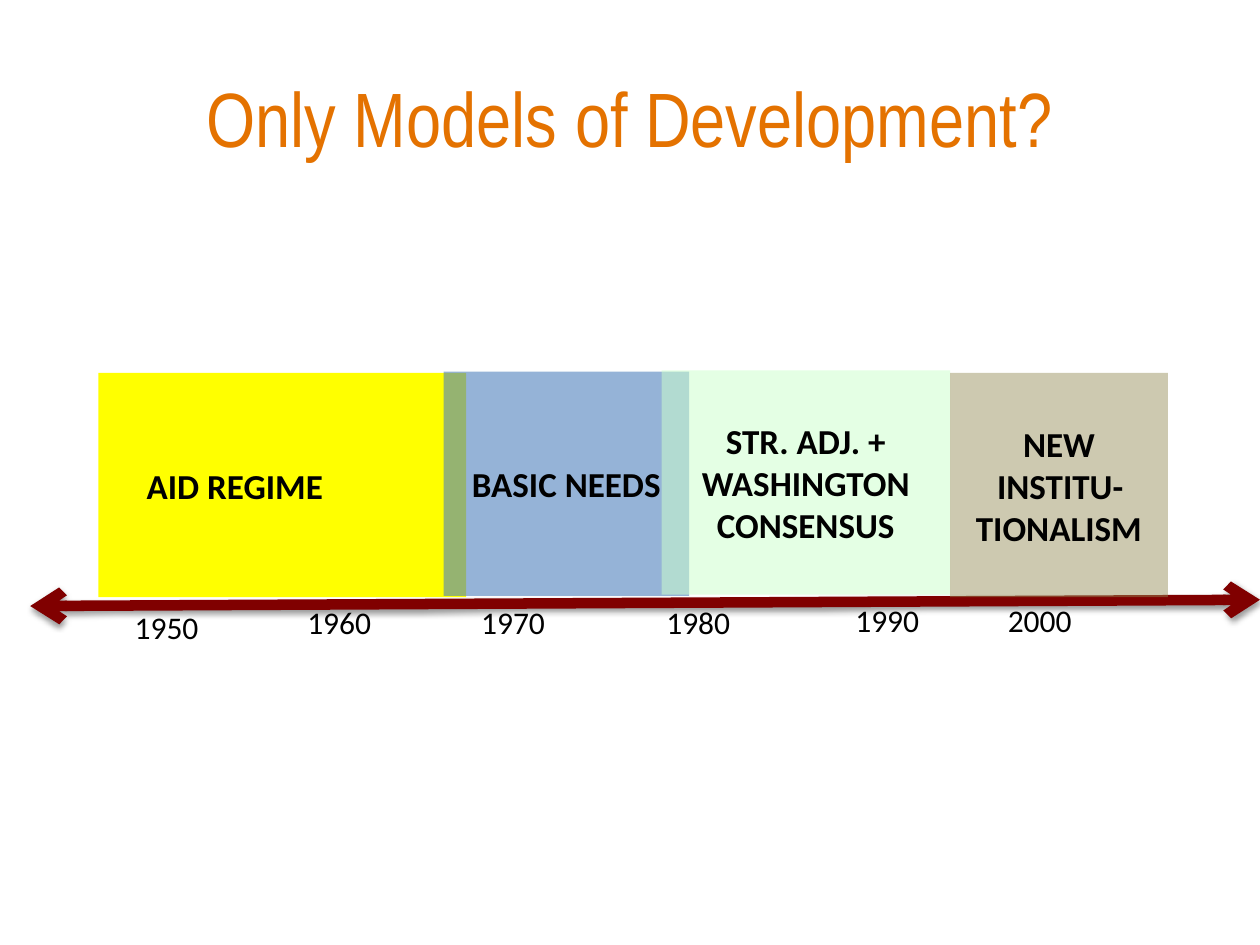
import pptx
import pptx.dml.color
import pptx.enum.shapes
import pptx.enum.text
import pptx.oxml
import pptx.oxml.ns
import pptx.util
from pptx.util import Inches

COLORS = {
    "title": "E47200",
    "text": "000000",
    "timeline": "800000",
    "aid": "FFFF00",
    "needs": "4F81BD",
    "washington": "CCFFCC",
    "institutions": "948A54",
}

DECADES = [
    ("1950", 0.97, 4.78),
    ("1960", 2.34, 4.74),
    ("1970", 3.72, 4.74),
    ("1980", 5.19, 4.74),
    ("1990", 6.69, 4.72),
    ("2000", 7.9, 4.72),
]

ERAS = [
    ("AID REGIME", "aid", 100, 0.78, 2.96, 2.92, 0.85),
    ("BASIC NEEDS", "needs", 60, 3.52, 2.95, 1.95, 0.1),
    ("STR. ADJ. + WASHINGTON CONSENSUS", "washington", 53, 5.25, 2.94, 2.29, 0.1),
    ("NEW INSTITU-TIONALISM", "institutions", 46, 7.54, 2.96, 1.73, 0.1),
]
ERA_HEIGHT = 1.78


def rgb(name):
    return pptx.dml.color.RGBColor.from_string(COLORS[name])


def add_element(parent, tag, **attributes):
    element = pptx.oxml.parse_xml(f"<a:{tag} {pptx.oxml.ns.nsdecls('a')}/>")
    for name, value in attributes.items():
        element.set(name, str(value))
    parent.append(element)
    return element


def write_text(box, text, size=18, font="Calibri", color="text", bold=False,
               align="LEFT", anchor="TOP"):
    frame = box.text_frame
    frame.word_wrap = True
    frame.vertical_anchor = getattr(pptx.enum.text.MSO_ANCHOR, anchor)
    para = frame.paragraphs[0]
    para.alignment = getattr(pptx.enum.text.PP_ALIGN, align)
    span = para.add_run()
    span.text = text
    span.font.size = pptx.util.Pt(size)
    span.font.name = font
    span.font.bold = bold
    span.font.color.rgb = rgb(color)


def add_label(page, text, left, top, width, height, **style):
    box = page.shapes.add_textbox(Inches(left), Inches(top), Inches(width), Inches(height))
    write_text(box, text, **style)


def add_timeline(page, start, end):
    line = page.shapes.add_connector(
        pptx.enum.shapes.MSO_CONNECTOR.STRAIGHT, *map(Inches, start + end))
    line.line.color.rgb = rgb("timeline")
    line.line.width = pptx.util.Pt(6)
    outline = line.line._get_or_add_ln()
    for tag in ("headEnd", "tailEnd"):
        add_element(outline, tag, type="arrow")
    effects = add_element(line._element.spPr, "effectLst")
    shadow = add_element(effects, "outerShdw", blurRad=pptx.util.Pt(3.1),
                         dist=pptx.util.Pt(1.6), dir=90 * 60000, rotWithShape=0)
    shade = add_element(shadow, "srgbClr", val=COLORS["text"])
    add_element(shade, "alpha", val=38000)


def add_era(page, text, color, opacity, left, top, width, right_margin):
    box = page.shapes.add_shape(
        pptx.enum.shapes.MSO_SHAPE.RECTANGLE,
        Inches(left), Inches(top), Inches(width), Inches(ERA_HEIGHT))
    box.shadow.inherit = False
    box.line.fill.background()
    box.fill.solid()
    box.fill.fore_color.rgb = rgb(color)
    if opacity < 100:
        shade = box._element.spPr.find(".//" + pptx.oxml.ns.qn("a:srgbClr"))
        add_element(shade, "alpha", val=opacity * 1000)
    box.text_frame.margin_right = Inches(right_margin)
    write_text(box, text, size=20, bold=True, align="CENTER", anchor="MIDDLE")


def main():
    deck = pptx.Presentation()
    deck.slide_width, deck.slide_height = Inches(10), Inches(7.5)
    page = deck.slides.add_slide(deck.slide_layouts[6])
    add_label(page, "Only Models of Development?", 0.5, 0.3, 9, 1.25, size=44,
              font="Arial Narrow", color="title", align="CENTER", anchor="MIDDLE")
    add_timeline(page, (0.24, 4.81), (10, 4.76))
    for year, left, top in DECADES:
        add_label(page, year, left, top, 0.85, 0.4)
    for era in ERAS:
        add_era(page, *era)
    deck.save("out.pptx")


if __name__ == "__main__":
    main()
